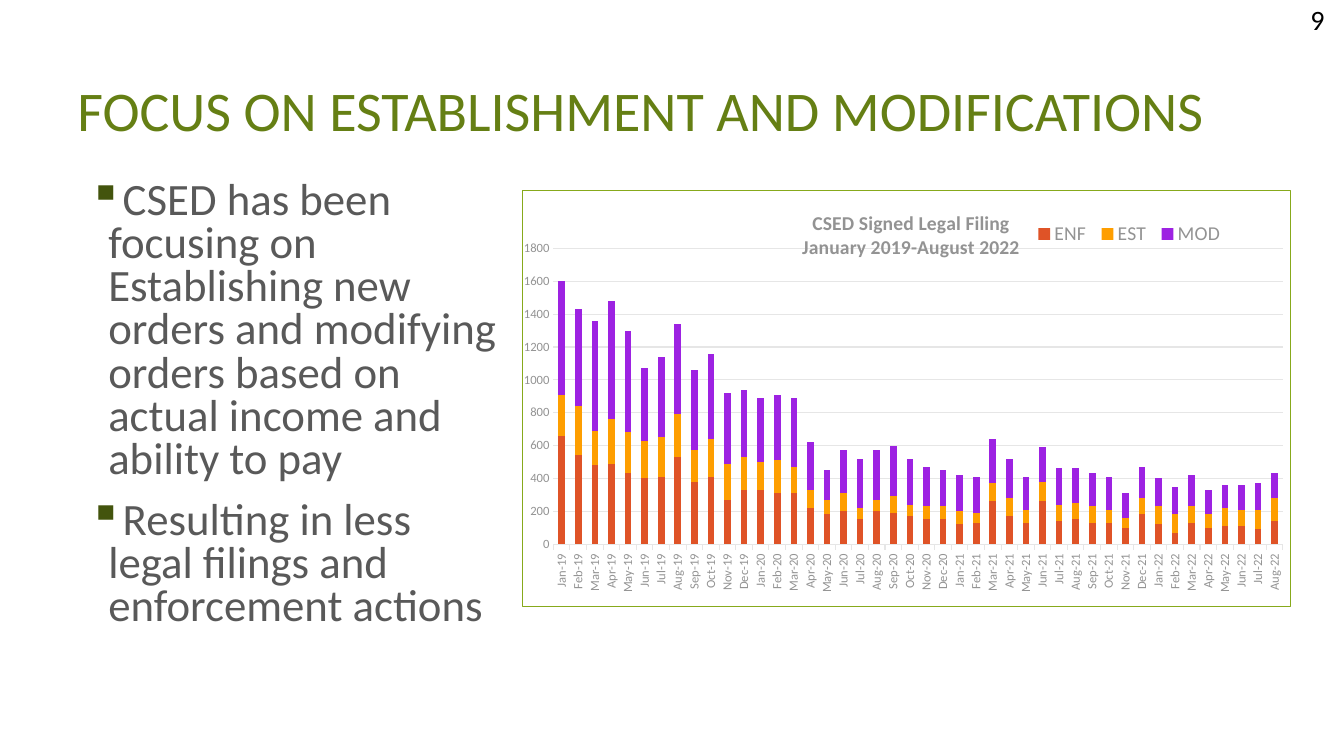
from itertools import product

from lxml.etree import SubElement
from pptx import Presentation
from pptx.chart.data import CategoryChartData
from pptx.dml.color import RGBColor
from pptx.enum.chart import XL_CHART_TYPE, XL_LEGEND_POSITION, XL_TICK_MARK
from pptx.enum.text import MSO_ANCHOR, PP_ALIGN
from pptx.oxml import parse_xml
from pptx.oxml.ns import nsdecls, qn
from pptx.util import Cm, Pt

OLIVE = RGBColor(0x65, 0x7F, 0x14)
DARK_OLIVE = RGBColor(0x43, 0x54, 0x0D)
LIME = RGBColor(0x87, 0xA9, 0x1B)
CHARCOAL = RGBColor(0x59, 0x59, 0x59)
GREY = RGBColor(0x93, 0x93, 0x93)
PALE_GREY = RGBColor(0xE6, 0xE6, 0xE6)
BLACK = RGBColor(0, 0, 0)
FONT = "Calibri"

BULLETS = [
    "CSED has been focusing on Establishing new orders and modifying orders "
    "based on actual income and ability to pay",
    "Resulting in less legal filings and enforcement actions",
]
TITLE_LINES = ["CSED Signed Legal Filing", "January 2019-August 2022"]
MONTHS = "Jan Feb Mar Apr May Jun Jul Aug Sep Oct Nov Dec".split()
FILINGS = {
    "ENF": (RGBColor(0xDF, 0x53, 0x27), [
        660, 540, 480, 490, 430, 400, 410, 530, 380, 410, 270, 330,
        330, 310, 310, 220, 180, 200, 150, 200, 190, 170, 150, 150,
        120, 130, 260, 170, 130, 260, 140, 150, 130, 130, 100, 180,
        120, 70, 130, 100, 110, 110, 90, 140]),
    "EST": (RGBColor(0xFE, 0x9E, 0x00), [
        250, 300, 210, 270, 250, 230, 240, 260, 190, 230, 220, 200,
        170, 200, 160, 110, 90, 110, 70, 70, 100, 70, 80, 80,
        80, 60, 110, 110, 80, 120, 100, 100, 100, 80, 60, 100,
        110, 110, 100, 80, 110, 100, 120, 140]),
    "MOD": (RGBColor(0x9D, 0x22, 0xE2), [
        690, 590, 670, 720, 620, 440, 490, 550, 490, 520, 430, 410,
        390, 400, 420, 290, 180, 260, 300, 300, 310, 280, 240, 220,
        220, 220, 270, 240, 200, 210, 220, 210, 200, 200, 150, 190,
        170, 170, 190, 150, 140, 150, 160, 150]),
}


def style_font(font, size, color, bold=False):
    """Apply the slide typeface with a size, colour and weight."""
    font.name, font.size, font.bold = FONT, Pt(size), bold
    font.color.rgb = color


def add_text(page, frame, lines, size, color, anchor=MSO_ANCHOR.TOP):
    """Add a wrapping text box with one paragraph per line and return its paragraphs."""
    box = page.shapes.add_textbox(*map(Cm, frame)).text_frame
    box.word_wrap = True
    box.vertical_anchor = anchor
    for index, line in enumerate(lines):
        para = box.add_paragraph() if index else box.paragraphs[0]
        span = para.add_run()
        span.text = line
        style_font(span.font, size, color)
    return box.paragraphs


def add_bullets(page, frame, lines):
    """Add a list with square bullets and hanging indents."""
    for index, para in enumerate(add_text(page, frame, lines, 32, CHARCOAL)):
        para.line_spacing = 0.8
        if index:
            para.space_before = Pt(13.5)
        properties = para._p.get_or_add_pPr()
        properties.set("marL", str(Cm(0.58)))
        properties.set("indent", str(-Cm(0.48)))
        tint = SubElement(properties, qn("a:buClr"))
        SubElement(tint, qn("a:srgbClr"), val=str(DARK_OLIVE))
        SubElement(properties, qn("a:buChar"), char="▪")


def place(part, after, target=None, **edges):
    """Give a chart part a manual layout, following the named child if there is one."""
    for old in part.findall(qn("c:layout")):
        part.remove(old)
    layout = parse_xml(f"<c:layout {nsdecls('c')}/>")
    manual = SubElement(layout, qn("c:manualLayout"))
    if target:
        SubElement(manual, qn("c:layoutTarget"), val=target)
    for name in ("x", "y"):
        SubElement(manual, qn(f"c:{name}Mode"), val="edge")
    for name, value in edges.items():
        SubElement(manual, qn(f"c:{name}"), val=str(value))
    if after:
        part.find(qn(after)).addnext(layout)
    else:
        part.insert(0, layout)


def style_axes(chart):
    """Style the month axis, the value axis and the gridlines."""
    months, values = chart.category_axis, chart.value_axis
    for axis in (months, values):
        style_font(axis.tick_labels.font, 9, GREY)
    months.major_tick_mark = XL_TICK_MARK.OUTSIDE
    months.tick_labels.font
    turned = chart.element.find(f".//{qn('c:catAx')}/{qn('c:txPr')}/{qn('a:bodyPr')}")
    turned.set("rot", "-5400000")
    turned.set("vert", "horz")
    values.major_tick_mark = XL_TICK_MARK.NONE
    values.minimum_scale, values.maximum_scale, values.major_unit = 0, 1800, 200
    values.format.line.fill.background()
    for line in (months.format.line, values.major_gridlines.format.line):
        line.color.rgb = PALE_GREY
        line.width = Pt(0.75)


def add_heading(chart):
    """Add the two-line chart title and the legend beside it."""
    heading = chart.chart_title.text_frame
    for index, line in enumerate(TITLE_LINES):
        para = heading.add_paragraph() if index else heading.paragraphs[0]
        span = para.add_run()
        span.text = line
        style_font(span.font, 14, GREY, bold=True)
    chart.has_legend = True
    chart.legend.position = XL_LEGEND_POSITION.BOTTOM
    chart.legend.include_in_layout = False
    style_font(chart.legend.font, 14, GREY)


def add_filings_chart(page, frame):
    """Add the stacked column chart of monthly filings."""
    data = CategoryChartData()
    count = len(FILINGS["ENF"][1])
    labels = [f"{month}-{year}" for year, month in product(range(19, 23), MONTHS)]
    data.categories = labels[:count]
    for name, (_, values) in FILINGS.items():
        data.add_series(name, values)
    chart = page.shapes.add_chart(
        XL_CHART_TYPE.COLUMN_STACKED, *map(Cm, frame), data).chart
    style_font(chart.font, 10, CHARCOAL)
    plot = chart.plots[0]
    plot.gap_width, plot.overlap, plot.vary_by_categories = 150, 100, False
    for series in plot.series:
        series.format.fill.solid()
        series.format.fill.fore_color.rgb = FILINGS[series.name][0]
    style_axes(chart)
    add_heading(chart)
    body = chart.element.find(qn("c:chart"))
    place(body.find(qn("c:title")), "c:tx", x=0.36, y=0.04)
    place(body.find(qn("c:legend")), "c:legendPos", x=0.66, y=0.07, w=0.26, h=0.07)
    place(body.find(qn("c:plotArea")), None, "inner", x=0.04, y=0.14, w=0.95, h=0.71)
    body.addnext(parse_xml(
        f"<c:spPr {nsdecls('c', 'a')}><a:noFill/><a:ln w=\"{Pt(0.75)}\"><a:solidFill>"
        f"<a:srgbClr val=\"{LIME}\"/></a:solidFill></a:ln></c:spPr>"))


def main():
    """Build the slide and save the deck."""
    deck = Presentation()
    deck.slide_width, deck.slide_height = Cm(33.87), Cm(19.05)
    page = deck.slides.add_slide(deck.slide_layouts[6])
    title = add_text(page, (1.7, 1.27, 30.48, 3.18),
                     ["FOCUS ON ESTABLISHMENT AND MODIFICATIONS"],
                     40, OLIVE, MSO_ANCHOR.MIDDLE)
    title[0].line_spacing = 0.9
    add_bullets(page, (1.9, 4.45, 11.05, 12.4), BULLETS)
    number = add_text(page, (32.18, 0, 1.45, 0.97), ["9"], 20, BLACK, MSO_ANCHOR.MIDDLE)
    number[0].alignment = PP_ALIGN.RIGHT
    add_filings_chart(page, (13.16, 4.78, 19.38, 10.52))
    deck.save("out.pptx")


if __name__ == "__main__":
    main()
